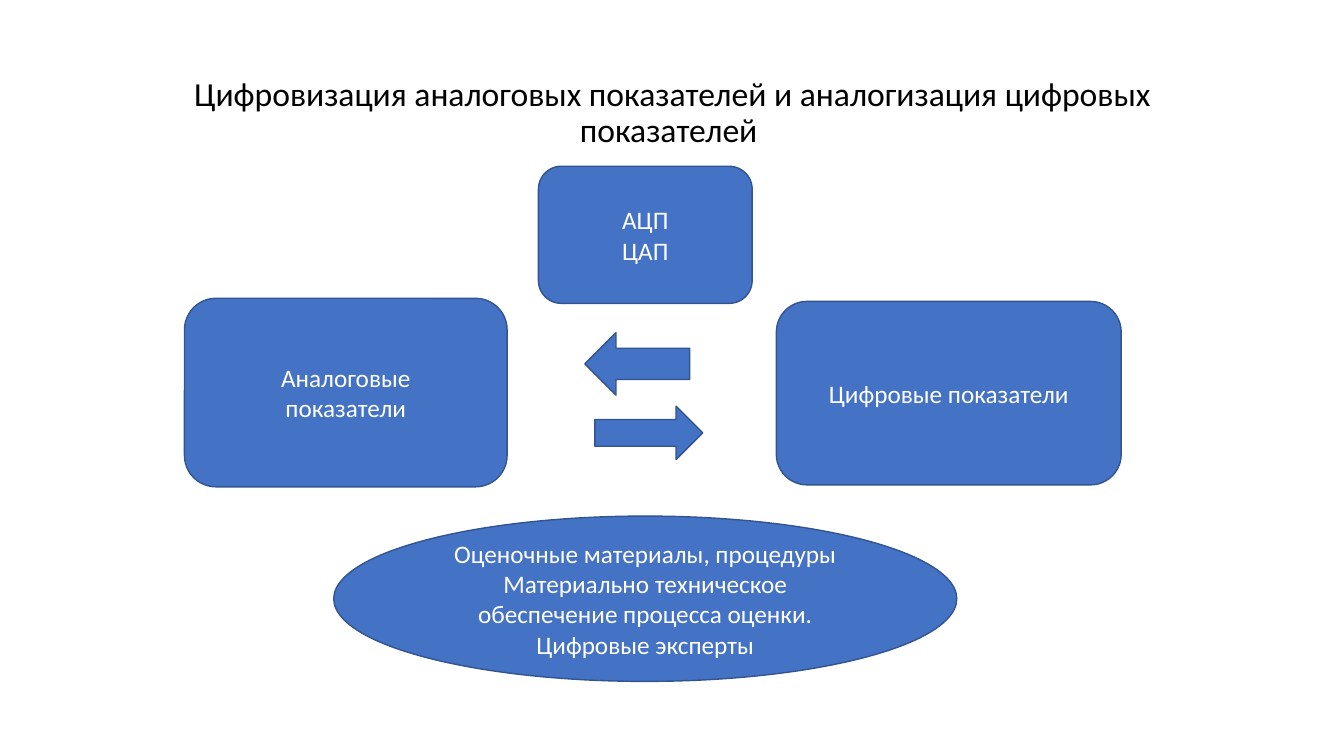
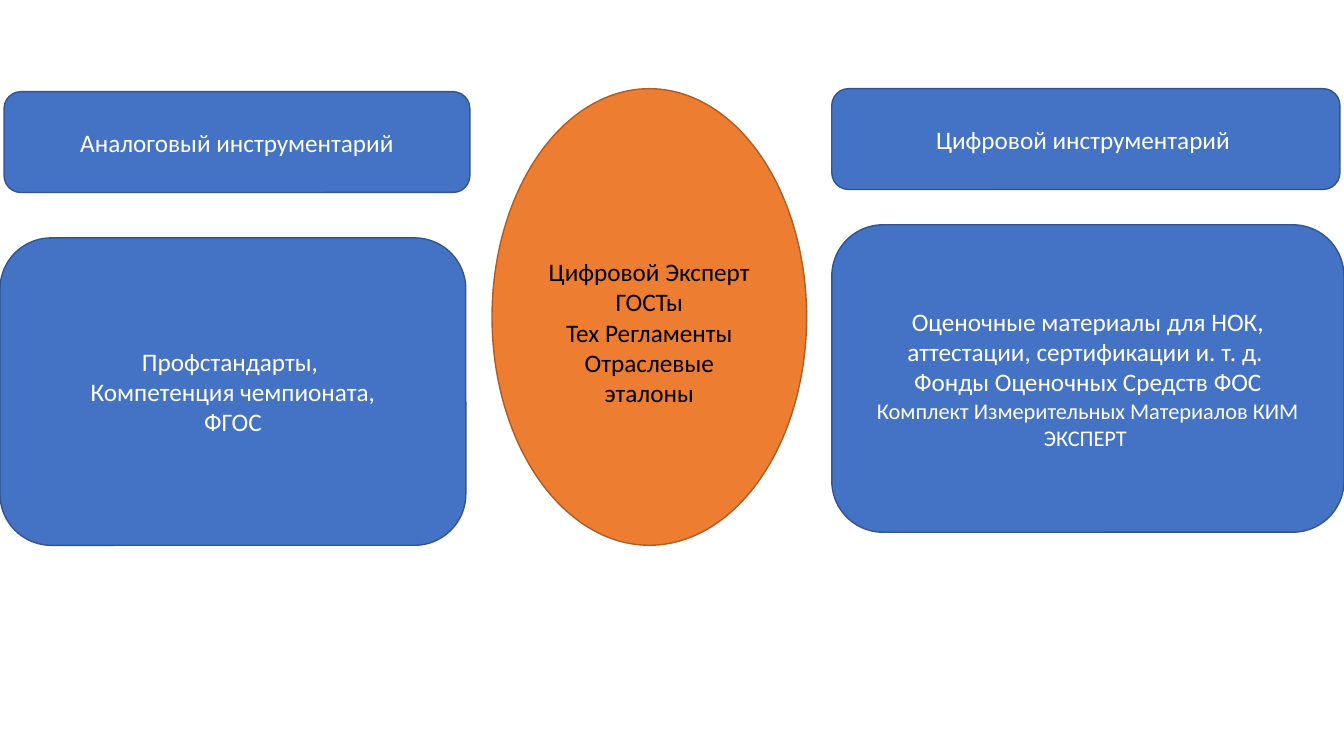
from pptx import Presentation
from pptx.dml.color import RGBColor
from pptx.enum.shapes import MSO_SHAPE
from pptx.enum.text import MSO_ANCHOR, PP_ALIGN
from pptx.util import Pt

PX = 9144
FONT = "Calibri"
BLUE = RGBColor(0x44, 0x72, 0xC4)
BLUE_EDGE = RGBColor(0x32, 0x54, 0x91)
ORANGE = RGBColor(0xED, 0x7D, 0x31)
ORANGE_EDGE = RGBColor(0xAF, 0x5C, 0x24)
WHITE = RGBColor(0xFF, 0xFF, 0xFF)
BLACK = RGBColor(0, 0, 0)
BLUE_STYLE = (BLUE, BLUE_EDGE, WHITE)
ORANGE_STYLE = (ORANGE, ORANGE_EDGE, BLACK)


def emu(*lengths):
    return [n * PX for n in lengths]


def write(sp, lines, color, size=18):
    tf = sp.text_frame
    tf.word_wrap = True
    tf.vertical_anchor = MSO_ANCHOR.MIDDLE
    for i, line in enumerate(lines):
        text, pt = line if isinstance(line, tuple) else (line, size)
        p = tf.add_paragraph() if i else tf.paragraphs[0]
        p.alignment = PP_ALIGN.CENTER
        r = p.add_run()
        r.text = text
        r.font.name = FONT
        r.font.size = Pt(pt)
        r.font.color.rgb = color
    return tf


def add_title(s, box, text):
    sp = s.shapes.add_textbox(*emu(*box))
    tf = write(sp, [text], BLACK, 24)
    tf.paragraphs[0].line_spacing = 0.9


def add_block(s, kind, box, lines=(), style=BLUE_STYLE):
    fill, edge, color = style
    sp = s.shapes.add_shape(kind, *emu(*box))
    sp.shadow.inherit = False
    sp.fill.solid()
    sp.fill.fore_color.rgb = fill
    sp.line.color.rgb = edge
    sp.line.width = Pt(1)
    write(sp, lines, color)
    return sp


def add_exchange(s, x, y):
    add_block(s, MSO_SHAPE.LEFT_ARROW, (x, y, 104, 62))
    add_block(s, MSO_SHAPE.RIGHT_ARROW, (x + 10, y + 73, 107, 53))


def add_toolkit(s, header_box, header, body_box, body):
    add_block(s, MSO_SHAPE.ROUNDED_RECTANGLE, header_box, [header])
    add_block(s, MSO_SHAPE.ROUNDED_RECTANGLE, body_box, body)


def conversion_slide(s):
    add_title(s, (92, 40, 1150, 145),
              "Цифровизация аналоговых показателей и аналогизация цифровых показателей ")
    add_exchange(s, 580, 330)
    for box, lines in (
        ((183, 296, 320, 187), ["Аналоговые", "показатели"]),
        ((770, 299, 342, 182), ["Цифровые показатели"]),
        ((534, 165, 212, 136), ["АЦП", "ЦАП"]),
    ):
        add_block(s, MSO_SHAPE.ROUNDED_RECTANGLE, box, lines)
    add_block(s, MSO_SHAPE.OVAL, (331, 512, 618, 164), [
        "Оценочные материалы, процедуры",
        "Материально техническое обеспечение процесса оценки.",
        "Цифровые эксперты",
    ])


def toolkit_slide(s):
    add_toolkit(s, (4, 91, 462, 100), "Аналоговый инструментарий",
                (0, 236, 462, 305),
                ["Профстандарты, ", "Компетенция чемпионата,", "ФГОС"])
    add_toolkit(s, (825, 88, 504, 100), "Цифровой инструментарий ",
                (825, 223, 508, 305),
                ["Оценочные материалы для НОК, аттестации, сертификации и. т. д. ",
                 "Фонды Оценочных Средств ФОС",
                 ("Комплект Измерительных Материалов КИМ", 16),
                 ("ЭКСПЕРТ ", 16)])
    expert = add_block(s, MSO_SHAPE.OVAL, (488, 88, 312, 453),
                       ["Цифровой Эксперт", "ГОСТы", "Тех Регламенты",
                        "Отраслевые эталоны"], ORANGE_STYLE)
    expert.text_frame.margin_top = 35 * PX


def main():
    prs = Presentation()
    prs.slide_width, prs.slide_height = emu(1333, 750)
    for build in (conversion_slide, toolkit_slide):
        build(prs.slides.add_slide(prs.slide_layouts[6]))
    prs.save("out.pptx")


if __name__ == "__main__":
    main()
